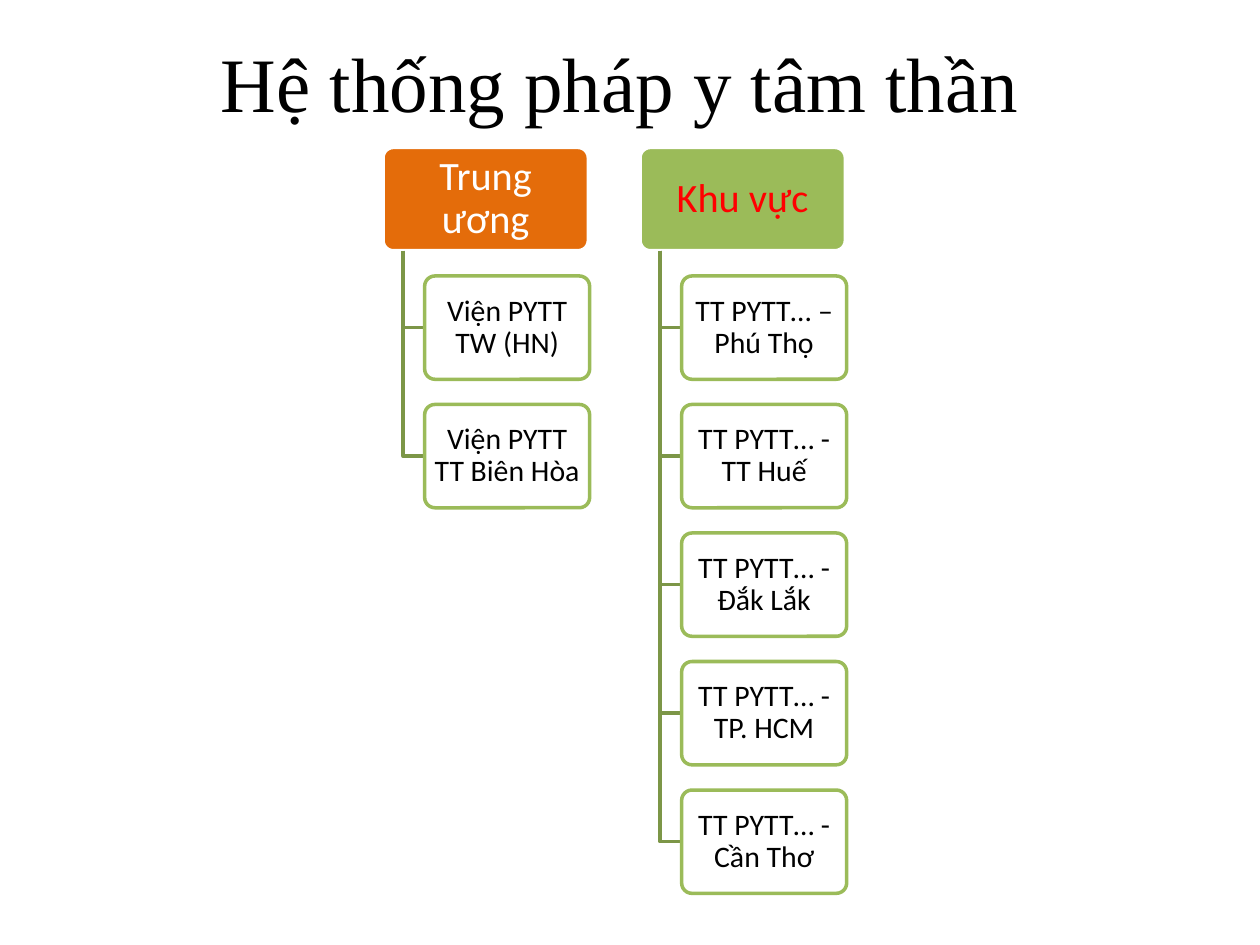
from dataclasses import dataclass

from pptx import Presentation
from pptx.dml.color import RGBColor
from pptx.enum.shapes import MSO_SHAPE
from pptx.enum.text import MSO_ANCHOR, PP_ALIGN
from pptx.shapes.autoshape import Shape
from pptx.slide import Slide
from pptx.text.text import TextFrame
from pptx.util import Inches, Pt

ROUNDED = MSO_SHAPE.ROUNDED_RECTANGLE
MIDDLE = MSO_ANCHOR.MIDDLE
CENTER = PP_ALIGN.CENTER

COLORS = {
    "white": "FFFFFF",
    "black": "000000",
    "orange": "E46C0A",
    "green": "9BBB59",
    "dark_green": "7C9647",
    "red": "FF0000",
}

TOP = 1.17
BOX_HEIGHT = 0.82
ROW_STEP = 1.02
HEADER_WIDTH = 1.63
UNIT_WIDTH = 1.31
TRUNK_INDENT = 0.16
UNIT_INDENT = 0.33


@dataclass(frozen=True)
class BoxStyle:
    fill: str
    line: str
    text: str
    size: int
    inset_x: float
    inset_y: float


@dataclass(frozen=True)
class Branch:
    left: float
    title: str
    style: BoxStyle
    units: tuple[str, ...]


UNIT_STYLE = BoxStyle("white", "green", "black", 17, 0.04, 0.02)

BRANCHES = (
    Branch(
        3.04,
        "Trung ương",
        BoxStyle("orange", "white", "white", 23, 0.05, 0.03),
        ("Viện PYTT TW (HN)", "Viện PYTT TT Biên Hòa"),
    ),
    Branch(
        5.08,
        "Khu vực",
        BoxStyle("green", "white", "red", 23, 0.05, 0.03),
        (
            "TT PYTT… – Phú Thọ",
            "TT PYTT… - TT Huế",
            "TT PYTT… - Đắk Lắk",
            "TT PYTT… - TP. HCM",
            "TT PYTT… - Cần Thơ",
        ),
    ),
)


def rgb(name: str) -> RGBColor:
    return RGBColor.from_string(COLORS[name])


def set_text(frame: TextFrame, text: str, font: str, size: int, color: str) -> None:
    frame.text = text
    frame.word_wrap = True
    frame.vertical_anchor = MIDDLE
    paragraph = frame.paragraphs[0]
    paragraph.alignment = CENTER
    run = paragraph.runs[0]
    run.font.name = font
    run.font.size = Pt(size)
    run.font.color.rgb = rgb(color)


def set_line(shape: Shape, color: str) -> None:
    shape.shadow.inherit = False
    shape.line.color.rgb = rgb(color)
    shape.line.width = Pt(2)


def draw_title(slide: Slide, text: str) -> None:
    shape = slide.shapes.add_textbox(
        Inches(0.67), Inches(0.17), Inches(8.5), Inches(0.96)
    )
    set_text(shape.text_frame, text, "Times New Roman", 44, "black")


def draw_box(
    slide: Slide, left: float, top: float, width: float, text: str, style: BoxStyle
) -> None:
    shape = slide.shapes.add_shape(
        ROUNDED, Inches(left), Inches(top), Inches(width), Inches(BOX_HEIGHT)
    )
    shape.adjustments[0] = 0.1
    shape.fill.solid()
    shape.fill.fore_color.rgb = rgb(style.fill)
    set_line(shape, style.line)
    frame = shape.text_frame
    set_text(frame, text, "Calibri", style.size, style.text)
    frame.margin_left = frame.margin_right = Inches(style.inset_x)
    frame.margin_top = frame.margin_bottom = Inches(style.inset_y)
    frame.paragraphs[0].line_spacing = 0.9


def draw_elbow(slide: Slide, left: float, top: float, right: float, bottom: float) -> None:
    builder = slide.shapes.build_freeform(Inches(left), Inches(top))
    builder.add_line_segments(
        [(Inches(left), Inches(bottom)), (Inches(right), Inches(bottom))], close=False
    )
    shape = builder.convert_to_shape()
    shape.fill.background()
    set_line(shape, "dark_green")


def draw_branch(slide: Slide, branch: Branch) -> None:
    draw_box(slide, branch.left, TOP, HEADER_WIDTH, branch.title, branch.style)
    unit_left = branch.left + UNIT_INDENT
    for row, unit in enumerate(branch.units, start=1):
        unit_top = TOP + row * ROW_STEP
        draw_elbow(
            slide,
            branch.left + TRUNK_INDENT,
            TOP + BOX_HEIGHT,
            unit_left,
            unit_top + BOX_HEIGHT / 2,
        )
        draw_box(slide, unit_left, unit_top, UNIT_WIDTH, unit, UNIT_STYLE)


def main() -> None:
    presentation = Presentation()
    presentation.slide_width = Inches(10)
    presentation.slide_height = Inches(7.5)
    slide = presentation.slides.add_slide(presentation.slide_layouts[6])
    draw_title(slide, "Hệ thống pháp y tâm thần")
    for branch in BRANCHES:
        draw_branch(slide, branch)
    presentation.save("out.pptx")


if __name__ == "__main__":
    main()
